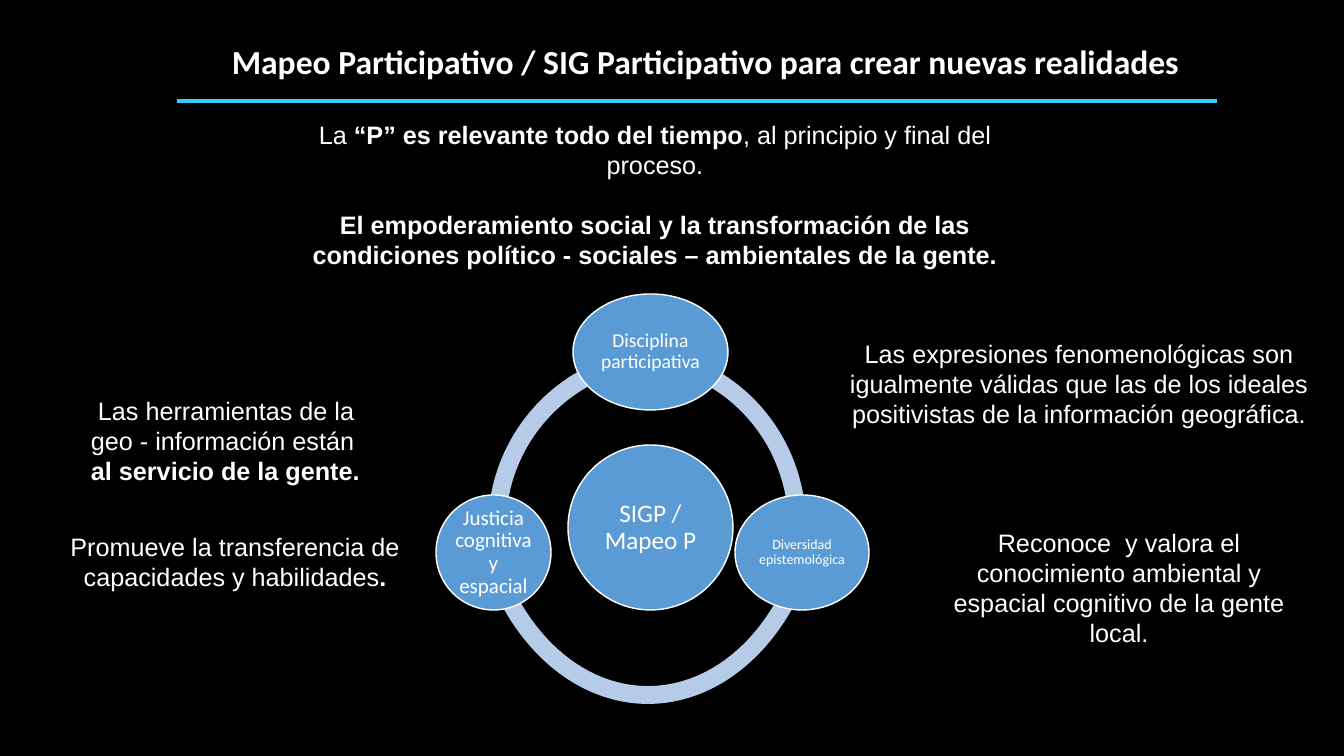
from dataclasses import dataclass

import pptx
import pptx.dml.color
import pptx.enum.shapes
import pptx.enum.text
import pptx.oxml
import pptx.oxml.ns
import pptx.util

RGBColor = pptx.dml.color.RGBColor
Align = pptx.enum.text.PP_ALIGN
Anchor = pptx.enum.text.MSO_ANCHOR
Preset = pptx.enum.shapes.MSO_SHAPE

BLACK = RGBColor(0x00, 0x00, 0x00)
WHITE = RGBColor(0xFF, 0xFF, 0xFF)
CYAN = RGBColor(0x33, 0xCC, 0xFF)
BLUE = RGBColor(0x5B, 0x9B, 0xD5)
PALE_BLUE = RGBColor(0xB5, 0xCB, 0xE7)

EMU_PER_PX = 914400 / 100.8
TITLE_ONLY = 5
PARAGRAPH_GAP = 21.5


@dataclass(frozen=True)
class Frame:
    left: int
    top: int
    width: int
    height: int


@dataclass(frozen=True)
class Piece:
    text: str
    bold: bool = False


@dataclass(frozen=True)
class Note:
    frame: Frame
    paragraphs: tuple[tuple[Piece, ...], ...]
    align: Align = Align.CENTER


@dataclass(frozen=True)
class Arc:
    frame: Frame
    start: float
    end: float


@dataclass(frozen=True)
class Bubble:
    frame: Frame
    text: str
    size: int


TITLE = "Mapeo Participativo / SIG Participativo para crear nuevas realidades"
TITLE_FRAME = Frame(145, 36, 1121, 50)
RULE = Frame(177, 101, 1040, 0)

NOTES = (
    Note(Frame(919, 522, 400, 132), (
        (Piece("Reconoce  y valora el conocimiento ambiental y espacial cognitivo de la gente local."),),
    )),
    Note(Frame(81, 390, 308, 102), (
        (Piece(" Las herramientas de la geo - información están "),
         Piece("al servicio de la gente.", True)),
    ), Align.LEFT),
    Note(Frame(282, 114, 746, 163), (
        (Piece("La "), Piece("“P” es relevante todo del tiempo", True),
         Piece(", al principio y final del proceso.")),
        (Piece("El empoderamiento social y la transformación de las condiciones "
               "político - sociales – ambientales de la gente.", True),),
    )),
    Note(Frame(41, 526, 388, 72), (
        (Piece("Promueve la transferencia de capacidades y habilidades"), Piece(".", True)),
    )),
    Note(Frame(839, 333, 480, 102), (
        (Piece("Las expresiones fenomenológicas son igualmente válidas que las de los "
               "ideales positivistas de la información geográfica."),),
    )),
)

ARC_THICKNESS = 0.05
ARCS = (
    Arc(Frame(488, 348, 358, 358), 102.77, 158.77),
    Arc(Frame(469, 237, 358, 467), 17.07, 90.93),
    Arc(Frame(453, 347, 353, 358), 166.27, 5.35),
)

BUBBLES = (
    Bubble(Frame(568, 445, 165, 165), "SIGP / Mapeo P", 18),
    Bubble(Frame(573, 294, 155, 116), "Disciplina participativa", 14),
    Bubble(Frame(735, 495, 134, 115), "Diversidad epistemológica", 10),
    Bubble(Frame(436, 495, 115, 115), "Justicia cognitiva y espacial", 15),
)


def px(length: int) -> pptx.util.Emu:
    return pptx.util.Emu(round(length * EMU_PER_PX))


def bounds(frame: Frame) -> tuple[pptx.util.Emu, ...]:
    return px(frame.left), px(frame.top), px(frame.width), px(frame.height)


def format_span(span, name: str, size: int, bold: bool = False) -> None:
    span.font.name = name
    span.font.size = pptx.util.Pt(size)
    span.font.bold = bold
    span.font.color.rgb = WHITE


def draw_title(slide) -> None:
    title = slide.shapes.title
    title.left, title.top, title.width, title.height = bounds(TITLE_FRAME)
    text_frame = title.text_frame
    text_frame.text = TITLE
    text_frame.word_wrap = True
    text_frame.auto_size = pptx.enum.text.MSO_AUTO_SIZE.NONE
    text_frame.vertical_anchor = Anchor.TOP
    para = text_frame.paragraphs[0]
    para.alignment = Align.CENTER
    format_span(para.runs[0], "Calibri", 24, True)


def draw_rule(slide) -> None:
    rule = slide.shapes.add_connector(
        pptx.enum.shapes.MSO_CONNECTOR.STRAIGHT,
        px(RULE.left), px(RULE.top), px(RULE.left + RULE.width), px(RULE.top))
    rule.line.color.rgb = CYAN
    rule.line.width = pptx.util.Pt(3)
    rule._element.spPr.append(
        pptx.oxml.parse_xml(f"<a:effectLst {pptx.oxml.ns.nsdecls('a')}/>"))


def draw_note(slide, note: Note) -> None:
    text_frame = slide.shapes.add_textbox(*bounds(note.frame)).text_frame
    text_frame.word_wrap = True
    for index, pieces in enumerate(note.paragraphs):
        para = text_frame.add_paragraph() if index else text_frame.paragraphs[0]
        para.alignment = note.align
        if index:
            para.space_before = pptx.util.Pt(PARAGRAPH_GAP)
        for piece in pieces:
            span = para.add_run()
            span.text = piece.text
            format_span(span, "Arial", 18, piece.bold)


def draw_preset(slide, preset: Preset, frame: Frame, color: RGBColor):
    shape = slide.shapes.add_shape(preset, *bounds(frame))
    shape.shadow.inherit = False
    shape.fill.solid()
    shape.fill.fore_color.rgb = color
    return shape


def draw_arc(slide, arc: Arc) -> None:
    shape = draw_preset(slide, Preset.BLOCK_ARC, arc.frame, PALE_BLUE)
    shape.line.fill.background()
    for index, value in enumerate((arc.start, arc.end, ARC_THICKNESS)):
        shape.adjustments[index] = value


def draw_bubble(slide, bubble: Bubble) -> None:
    shape = draw_preset(slide, Preset.OVAL, bubble.frame, BLUE)
    shape.line.color.rgb = WHITE
    shape.line.width = pptx.util.Pt(1)
    text_frame = shape.text_frame
    text_frame.text = bubble.text
    text_frame.word_wrap = True
    text_frame.vertical_anchor = Anchor.MIDDLE
    text_frame.margin_left = text_frame.margin_right = px(1)
    text_frame.margin_top = text_frame.margin_bottom = px(1)
    para = text_frame.paragraphs[0]
    para.alignment = Align.CENTER
    para.line_spacing = 0.9
    format_span(para.runs[0], "Calibri", bubble.size)


def main() -> None:
    deck = pptx.Presentation()
    deck.slide_width, deck.slide_height = px(1344), px(756)
    page = deck.slides.add_slide(deck.slide_layouts[TITLE_ONLY])
    page.background.fill.solid()
    page.background.fill.fore_color.rgb = BLACK
    draw_title(page)
    draw_rule(page)
    for note in NOTES:
        draw_note(page, note)
    for arc in ARCS:
        draw_arc(page, arc)
    for bubble in BUBBLES:
        draw_bubble(page, bubble)
    deck.save("out.pptx")


if __name__ == "__main__":
    main()
